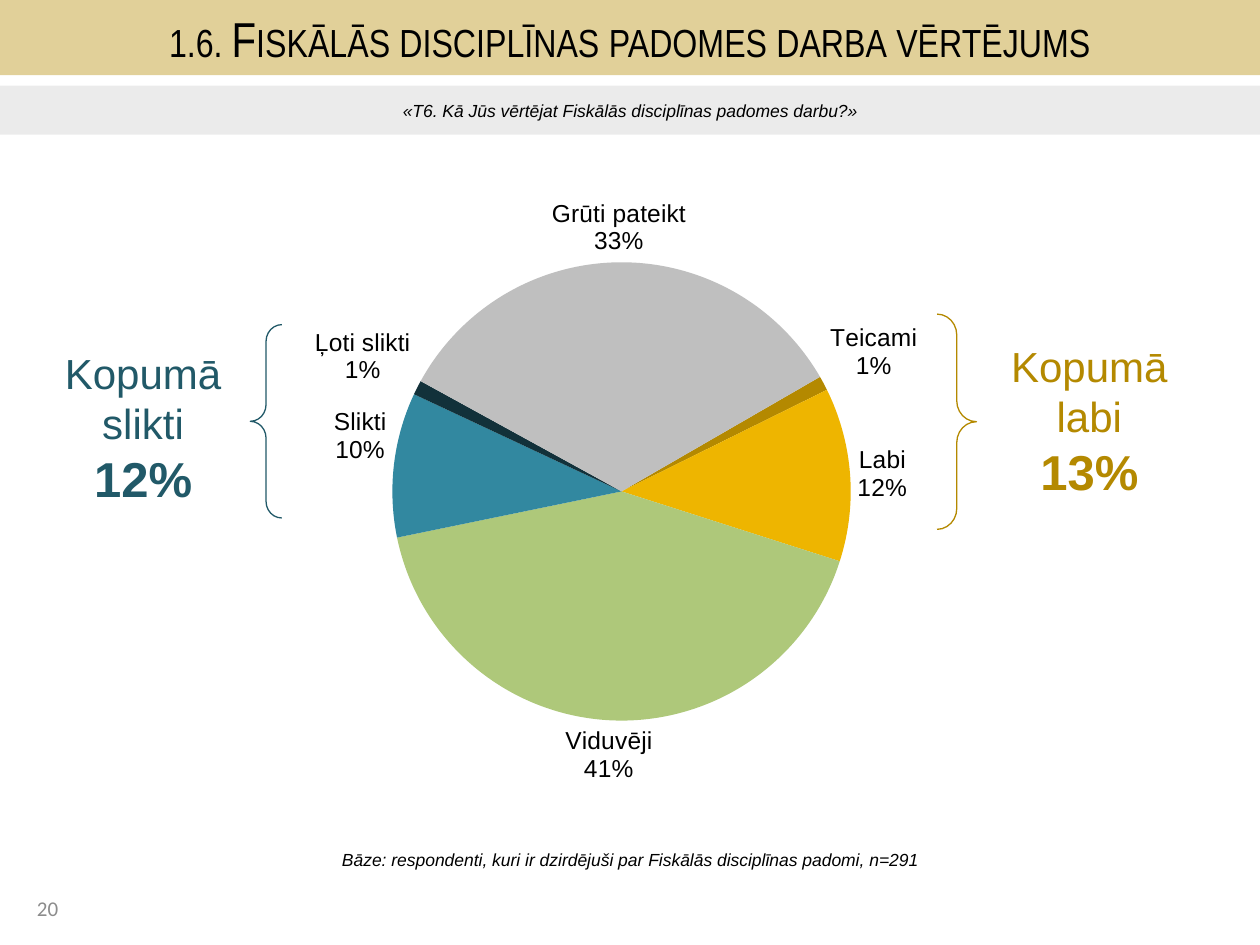
from lxml import etree
from pptx import Presentation
from pptx.chart.data import CategoryChartData
from pptx.dml.color import RGBColor
from pptx.enum.chart import XL_CHART_TYPE, XL_LABEL_POSITION
from pptx.enum.shapes import MSO_SHAPE
from pptx.enum.text import MSO_ANCHOR, MSO_AUTO_SIZE, PP_ALIGN
from pptx.oxml.ns import qn
from pptx.util import Pt

CENTER, LEFT = PP_ALIGN.CENTER, PP_ALIGN.LEFT
MIDDLE, TOP = MSO_ANCHOR.MIDDLE, MSO_ANCHOR.TOP
RECTANGLE, BRACE = MSO_SHAPE.RECTANGLE, MSO_SHAPE.RIGHT_BRACE
PIE, OUTSIDE = XL_CHART_TYPE.PIE, XL_LABEL_POSITION.OUTSIDE_END

WIDTH, HEIGHT = 720, 540
TITLE = "1.6. Fiskālās disciplīnas padomes darba vērtējums"
QUESTION = "«T6. Kā Jūs vērtējat Fiskālās disciplīnas padomes darbu?»"
BASE = "Bāze: respondenti, kuri ir dzirdējuši par Fiskālās disciplīnas padomi, n=291"
PAGE_NUMBER = "20"
ANSWERS = [
    ("Teicami", 1, "B48900"),
    ("Labi", 12, "EEB500"),
    ("Viduvēji", 41, "AEC87A"),
    ("Slikti", 10, "3288A0"),
    ("Ļoti slikti", 1, "12313A"),
    ("Grūti pateikt", 33, "BFBFBF"),
]
FIRST_ANGLE = 60
CHART_AREA = (139, 100, 481.5, 358.5)
PLOT_AREA = {"x": 0.177, "y": 0.139, "w": 0.544, "h": 0.731}
SUMMARIES = [
    ("labi", "13%", "B48900", (570, 191, 105, 99), (535.5, 179.5, 22.5, 123), 0),
    ("slikti", "12%", "215968", (26, 195, 111.5, 99), (143, 185.5, 18, 110.5), 180),
]


def color(value):
    return RGBColor.from_string(value)


def place(area):
    return [Pt(length) for length in area]


def write(box, lines, font, ink, anchor=MIDDLE, align=CENTER):
    frame = box.text_frame
    frame.word_wrap = True
    frame.auto_size = MSO_AUTO_SIZE.NONE
    frame.vertical_anchor = anchor
    for index, (text, size, style) in enumerate(lines):
        para = frame.add_paragraph() if index else frame.paragraphs[0]
        para.alignment = align
        span = para.add_run()
        span.text = text
        span.font.name = font
        span.font.size = Pt(size)
        span.font.color.rgb = color(ink)
        span.font.bold = style == "bold"
        span.font.italic = style == "italic"
        if style == "small caps":
            span.font._element.set("cap", "small")


def add_text(page, area, *content):
    box = page.shapes.add_textbox(*place(area))
    write(box, *content)


def add_title(page):
    title = page.shapes.title
    title.left, title.top, title.width, title.height = place((0, 0, WIDTH, 43))
    title.fill.solid()
    title.fill.fore_color.rgb = color("E1D099")
    write(title, [(TITLE, 28, "small caps")], "Arial Narrow", "000000")


def add_question(page):
    band = page.shapes.add_shape(RECTANGLE, *place((0, 49, WIDTH, 28)))
    band.shadow.inherit = False
    band.line.fill.background()
    band.fill.solid()
    band.fill.fore_color.rgb = color("D9D9D9")
    tint = band._element.spPr.find(".//" + qn("a:srgbClr"))
    etree.SubElement(tint, qn("a:alpha"), val="50000")
    write(band, [(QUESTION, 10, "italic")], "Arial", "000000")


def set_plot_area(chart):
    plot_area = chart._chartSpace.find(".//" + qn("c:plotArea"))
    for layout in plot_area.findall(qn("c:layout")):
        plot_area.remove(layout)
    layout = etree.Element(qn("c:layout"))
    manual = etree.SubElement(layout, qn("c:manualLayout"))
    etree.SubElement(manual, qn("c:layoutTarget"), val="inner")
    for side in "xy":
        etree.SubElement(manual, qn(f"c:{side}Mode"), val="edge")
    for side, share in PLOT_AREA.items():
        etree.SubElement(manual, qn(f"c:{side}"), val=str(share))
    plot_area.insert(0, layout)


def add_pie(page):
    data = CategoryChartData()
    data.categories = [name for name, _, _ in ANSWERS]
    data.add_series("Series 1", [value for _, value, _ in ANSWERS])
    chart = page.shapes.add_chart(PIE, *place(CHART_AREA), data).chart
    chart.has_legend = False
    chart.has_title = False
    chart.font.name = "Arial"
    chart.font.size = Pt(10)
    chart.font.color.rgb = color("000000")

    plot = chart.plots[0]
    plot.vary_by_categories = True
    for index, (_, _, fill) in enumerate(ANSWERS):
        slice_fill = plot.series[0].points[index].format.fill
        slice_fill.solid()
        slice_fill.fore_color.rgb = color(fill)

    plot.has_data_labels = True
    labels = plot.data_labels
    labels.show_category_name = True
    labels.show_value = True
    labels.show_percentage = False
    labels.number_format = '0"%"'
    labels.number_format_is_linked = False
    labels.position = OUTSIDE
    labels.font.name = "Arial"
    labels.font.size = Pt(14)
    labels.font.color.rgb = color("000000")
    separator = etree.Element(qn("c:separator"))
    separator.text = "\n"
    labels._element.find(qn("c:showBubbleSize")).addnext(separator)

    for angle in plot._element.findall(qn("c:firstSliceAng")):
        plot._element.remove(angle)
    etree.SubElement(plot._element, qn("c:firstSliceAng"), val=str(FIRST_ANGLE))
    set_plot_area(chart)


def add_summary(page, word, share, ink, text_area, brace_area, rotation):
    brace = page.shapes.add_shape(BRACE, *place(brace_area))
    brace.shadow.inherit = False
    brace.rotation = rotation
    brace.adjustments[0] = 0.53
    brace.fill.background()
    brace.line.color.rgb = color(ink)
    brace.line.width = Pt(0.75)
    lines = [("Kopumā", 24, ""), (word, 24, ""), (share, 28, "bold")]
    add_text(page, text_area, lines, "Arial", ink, TOP)


def main():
    deck = Presentation()
    deck.slide_width, deck.slide_height = Pt(WIDTH), Pt(HEIGHT)
    page = deck.slides.add_slide(deck.slide_layouts[5])
    add_title(page)
    add_question(page)
    add_pie(page)
    for summary in SUMMARIES:
        add_summary(page, *summary)
    add_text(page, (0, 474, WIDTH, 34), [(BASE, 10, "italic")], "Arial", "000000")
    add_text(page, (14, 506, 76, 26), [(PAGE_NUMBER, 12, "")], "Calibri", "8C8C8C", MIDDLE, LEFT)
    deck.save("out.pptx")


if __name__ == "__main__":
    main()
